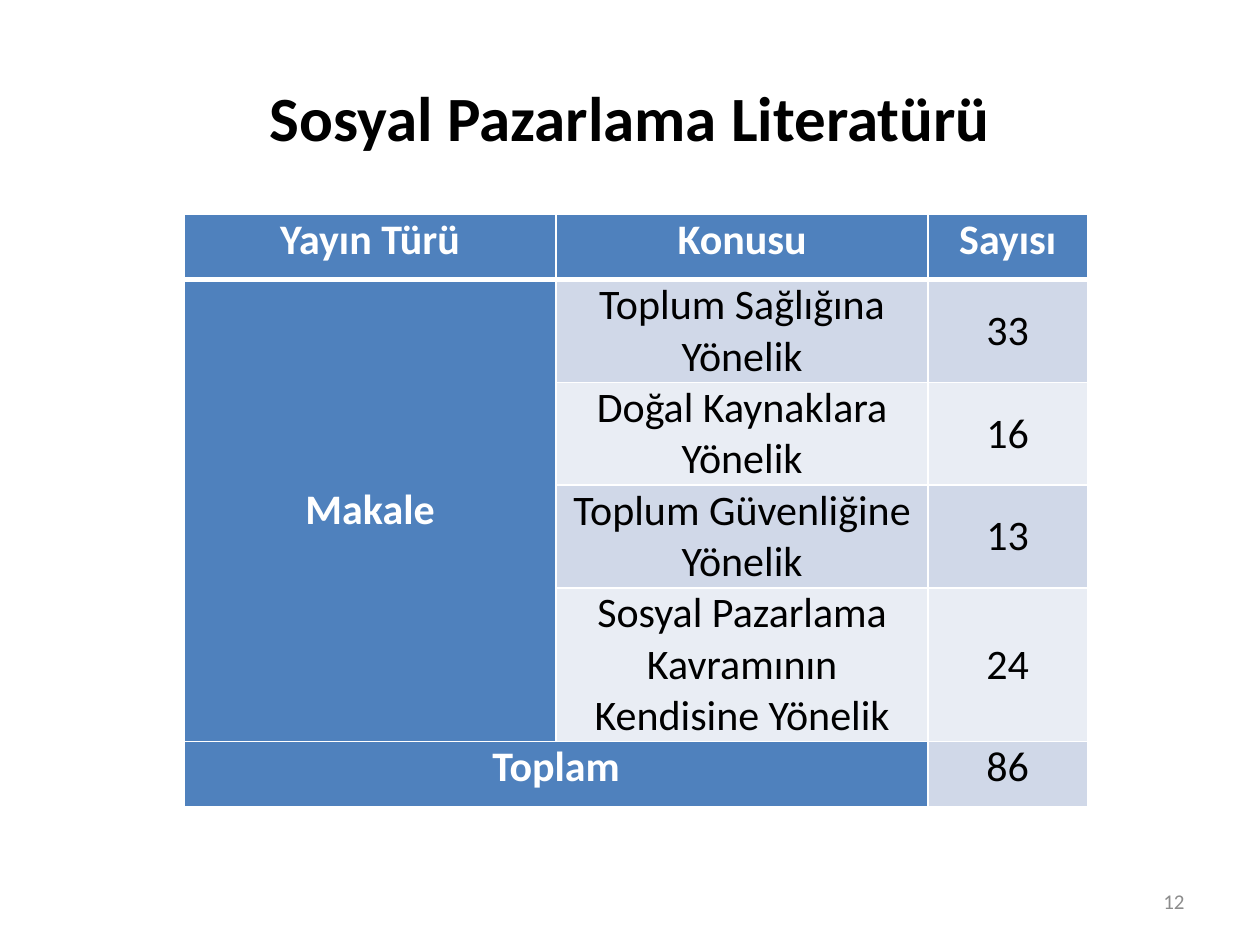
from lxml.etree import SubElement as Sub
from pptx import Presentation
from pptx.dml.color import RGBColor
from pptx.enum.text import MSO_ANCHOR as Anchor, PP_ALIGN as Align
from pptx.oxml.ns import qn
from pptx.util import Cm, Pt

BLACK = RGBColor(0x00, 0x00, 0x00)
WHITE = RGBColor(0xFF, 0xFF, 0xFF)
GREY = RGBColor(0x8C, 0x8C, 0x8C)
BLUE = RGBColor(0x4F, 0x81, 0xBD)
BANDS = RGBColor(0xD0, 0xD8, 0xE8), RGBColor(0xE9, 0xED, 0xF4)

TITLE = "Sosyal Pazarlama Literatürü"
PAGE = "12"
ROWS = [
    ("Yayın Türü", "Konusu", "Sayısı"),
    ("Makale", "Toplum Sağlığına Yönelik", "33"),
    ("", "Doğal Kaynaklara Yönelik", "16"),
    ("", "Toplum Güvenliğine Yönelik", "13"),
    ("", "Sosyal Pazarlama Kavramının Kendisine Yönelik", "24"),
    ("Toplam", "", "86"),
]
WIDTHS = 7.5, 7.5, 3.21
HEIGHTS = 1.32, 2.07, 2.07, 2.07, 3.1, 1.32
LAST = len(ROWS) - 1


def put(frame, text, size=24, color=BLACK, bold=False, align=Align.CENTER, before=0):
    frame.word_wrap = True
    para = frame.paragraphs[0]
    para.alignment = align
    para.space_before = Pt(before)
    run = para.add_run()
    run.text = text
    font = run.font
    font.name, font.size, font.bold = "Calibri", Pt(size), bold
    font.color.rgb = color


def add_box(slide, text, left, top, width, height, **look):
    box = slide.shapes.add_textbox(Cm(left), Cm(top), Cm(width), Cm(height))
    box.text_frame.vertical_anchor = Anchor.MIDDLE
    put(box.text_frame, text, **look)


def add_edge(cell, side, width):
    line = Sub(cell._tc.get_or_add_tcPr(), qn(f"a:ln{side}"), w=str(Pt(width)))
    Sub(Sub(line, qn("a:solidFill")), qn("a:srgbClr"), val=str(WHITE))


def style(cell, row, col):
    """Set the borders, fill, margins and anchor of one cell."""
    for side in "LRTB":
        thick = (row, side) in ((0, "B"), (1, "T"))
        add_edge(cell, side, 3 if thick else 1)
    cell.fill.solid()
    cell.fill.fore_color.rgb = BLUE if is_head(row, col) else BANDS[(row - 1) % 2]
    cell.margin_left = cell.margin_right = Cm(0.18)
    cell.margin_top = cell.margin_bottom = 0
    cell.vertical_anchor = Anchor.TOP if row in (0, LAST) else Anchor.MIDDLE


def is_head(row, col):
    return row == 0 or col == 0 or (row == LAST and col == 1)


def add_grid(slide):
    table = slide.shapes.add_table(
        len(ROWS), len(WIDTHS), Cm(3.71), Cm(4.32), Cm(sum(WIDTHS)), Cm(sum(HEIGHTS))
    ).table
    for col, width in zip(table.columns, WIDTHS):
        col.width = Cm(width)
    for row, height in zip(table.rows, HEIGHTS):
        row.height = Cm(height)
    for r, texts in enumerate(ROWS):
        for c, text in enumerate(texts):
            cell = table.cell(r, c)
            style(cell, r, c)
            if text:
                head = is_head(r, c)
                put(cell.text_frame, text, color=WHITE if head else BLACK,
                    bold=head, before=0.2)
    table.cell(1, 0).merge(table.cell(LAST - 1, 0))
    table.cell(LAST, 0).merge(table.cell(LAST, 1))


def main():
    deck = Presentation()
    deck.slide_width, deck.slide_height = Cm(25.4), Cm(19.05)
    slide = deck.slides.add_slide(deck.slide_layouts[6])
    add_box(slide, TITLE, 1.27, 0.76, 22.86, 3.18, size=36, bold=True)
    add_grid(slide)
    add_box(slide, PAGE, 18.2, 17.66, 5.93, 1.01, size=12, color=GREY, align=Align.RIGHT)
    deck.save("out.pptx")


if __name__ == "__main__":
    main()
